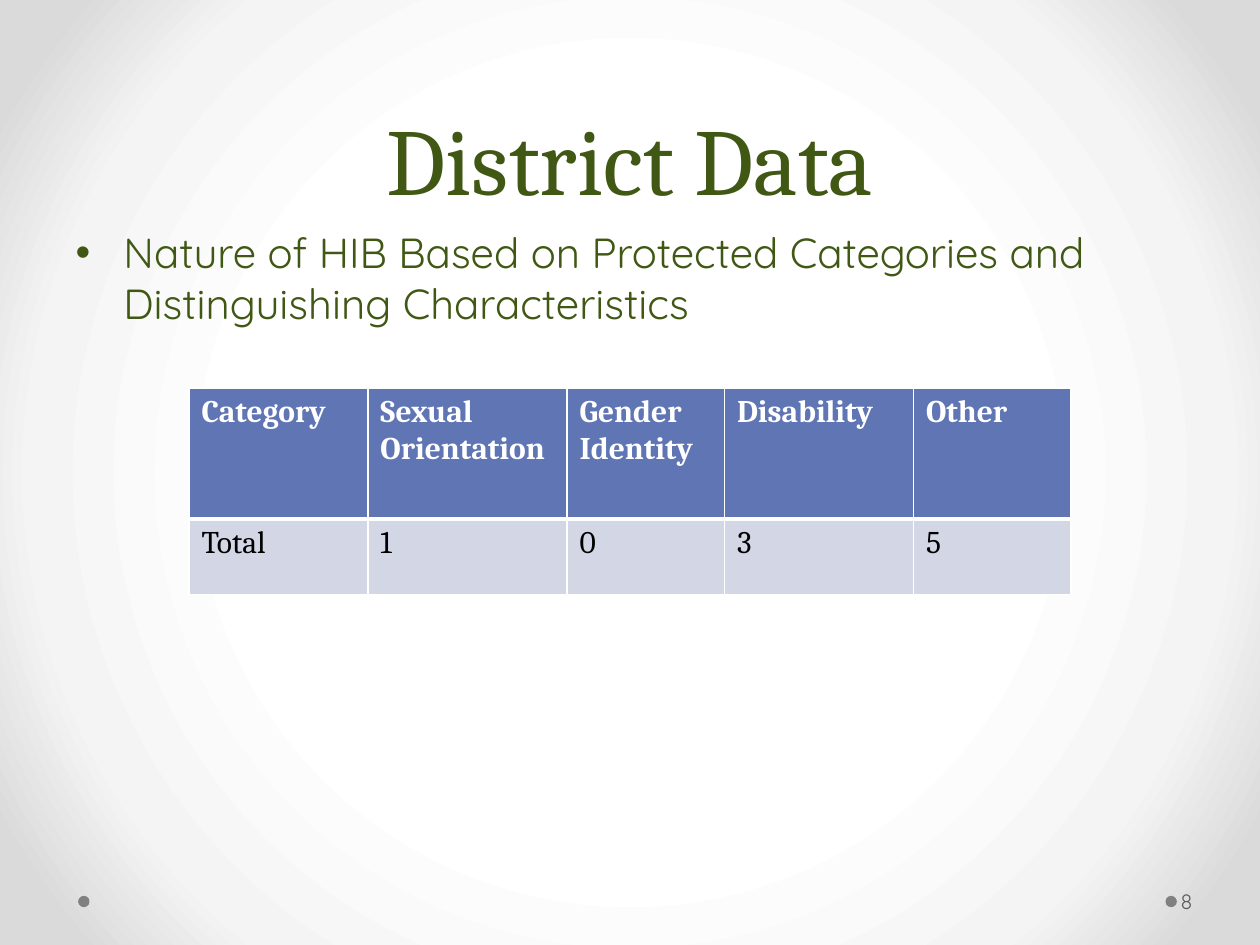
from dataclasses import dataclass

from lxml.etree import SubElement
from pptx import Presentation
from pptx.dml.color import RGBColor
from pptx.enum.shapes import MSO_SHAPE
from pptx.enum.text import MSO_ANCHOR, PP_ALIGN
from pptx.oxml import parse_xml
from pptx.oxml.ns import nsdecls, qn
from pptx.util import Inches, Pt


@dataclass(frozen=True)
class Theme:
    heading_font: str = "Cambria"
    body_font: str = "Quicksand"
    green: str = "405814"
    header_fill: str = "6076B4"
    row_fill: str = "D2D6E5"
    white: str = "FFFFFF"
    black: str = "000000"
    dot: str = "808080"
    number: str = "595959"
    backdrop: tuple = ((50, "FFFFFF"), (76, "F4F4F4"), (92, "DADADA"))
    title_size: int = 54
    body_size: int = 24
    table_size: int = 18
    number_size: int = 12


THEME = Theme()
ROWS = (
    ("Category", "Sexual Orientation", "Gender Identity", "Disability", "Other"),
    ("Total", "1", "0", "3", "5"),
)
COLUMN_WIDTHS = (1.42, 1.58, 1.25, 1.5, 1.25)
ROW_HEIGHTS = (1.04, 0.6)


def add_span(para, text, font, size, color, bold=False):
    span = para.add_run()
    span.text = text
    span.font.name = font
    span.font.size = Pt(size)
    span.font.bold = bold
    span.font.color.rgb = RGBColor.from_string(color)


def place(box, left, top, width, height):
    box.left, box.top = Inches(left), Inches(top)
    box.width, box.height = Inches(width), Inches(height)


def paint_background(page):
    page.background.fill.gradient()
    old = page.element.find(".//" + qn("a:gradFill"))
    stops = "".join(
        f'<a:gs pos="{position * 1000}"><a:srgbClr val="{color}"/></a:gs>'
        for position, color in THEME.backdrop
    )
    gradient = parse_xml(
        f'<a:gradFill {nsdecls("a")} rotWithShape="1"><a:gsLst>{stops}</a:gsLst>'
        '<a:path path="circle">'
        '<a:fillToRect l="50000" t="50000" r="50000" b="50000"/>'
        "</a:path></a:gradFill>"
    )
    old.getparent().replace(old, gradient)


def add_dot(page, left):
    dot = page.shapes.add_shape(
        MSO_SHAPE.OVAL, Inches(left), Inches(7.11), Inches(0.09), Inches(0.09)
    )
    dot.shadow.inherit = False
    dot.fill.solid()
    dot.fill.fore_color.rgb = RGBColor.from_string(THEME.dot)
    dot.line.fill.background()


def fill_title(page, text):
    title = page.shapes.title
    place(title, 0.5, 0, 9, 1.75)
    title.text_frame.vertical_anchor = MSO_ANCHOR.BOTTOM
    para = title.text_frame.paragraphs[0]
    para.alignment = PP_ALIGN.CENTER
    para.line_spacing = Pt(58)
    add_span(para, text, THEME.heading_font, THEME.title_size, THEME.green)


def fill_body(page, text):
    body = page.placeholders[1]
    place(body, 0.5, 1.75, 9, 4.95)
    para = body.text_frame.paragraphs[0]
    para.space_before = Pt(THEME.body_size * 0.2)
    add_span(para, text, THEME.body_font, THEME.body_size, THEME.green)
    settings = para._p.get_or_add_pPr()
    settings.set("marL", str(Inches(0.38)))
    settings.set("indent", str(-Inches(0.38)))
    SubElement(settings, qn("a:buFont"), typeface="Arial")
    SubElement(settings, qn("a:buChar"), char="•")


def add_page_number(page, text):
    box = page.shapes.add_textbox(
        Inches(9.34), Inches(6.95), Inches(0.61), Inches(0.4)
    )
    frame = box.text_frame
    frame.word_wrap = True
    frame.vertical_anchor = MSO_ANCHOR.MIDDLE
    frame.margin_left = Inches(0.03)
    frame.margin_right = Inches(0.05)
    add_span(
        frame.paragraphs[0], text, THEME.body_font, THEME.number_size, THEME.number
    )


def style_cell(cell, fill, bottom_width):
    cell.fill.solid()
    cell.fill.fore_color.rgb = RGBColor.from_string(fill)
    settings = cell._tc.get_or_add_tcPr()
    widths = {"lnL": 1, "lnR": 1, "lnT": 1, "lnB": bottom_width}
    for index, (side, width) in enumerate(widths.items()):
        border = parse_xml(
            f'<a:{side} {nsdecls("a")} w="{Pt(width)}"><a:solidFill>'
            f'<a:srgbClr val="{THEME.white}"/></a:solidFill></a:{side}>'
        )
        settings.insert(index, border)


def add_data_table(page):
    table = page.shapes.add_table(
        len(ROWS), len(COLUMN_WIDTHS), Inches(1.5), Inches(3.08),
        Inches(sum(COLUMN_WIDTHS)), Inches(sum(ROW_HEIGHTS)),
    ).table
    table.horz_banding = False
    for column, width in zip(table.columns, COLUMN_WIDTHS):
        column.width = Inches(width)
    for row, height, texts in zip(table.rows, ROW_HEIGHTS, ROWS):
        row.height = Inches(height)
        header = texts is ROWS[0]
        fill = THEME.header_fill if header else THEME.row_fill
        color = THEME.white if header else THEME.black
        for cell, text in zip(row.cells, texts):
            style_cell(cell, fill, 3 if header else 1)
            para = cell.text_frame.paragraphs[0]
            add_span(
                para, text, THEME.heading_font, THEME.table_size, color, header
            )


def main():
    deck = Presentation()
    deck.slide_width, deck.slide_height = Inches(10), Inches(7.5)
    page = deck.slides.add_slide(deck.slide_layouts[1])
    paint_background(page)
    for left in (9.25, 0.62):
        add_dot(page, left)
    fill_title(page, "District Data")
    fill_body(
        page,
        "Nature of HIB Based on Protected Categories and "
        "Distinguishing Characteristics",
    )
    add_page_number(page, "8")
    add_data_table(page)
    deck.save("out.pptx")


if __name__ == "__main__":
    main()
